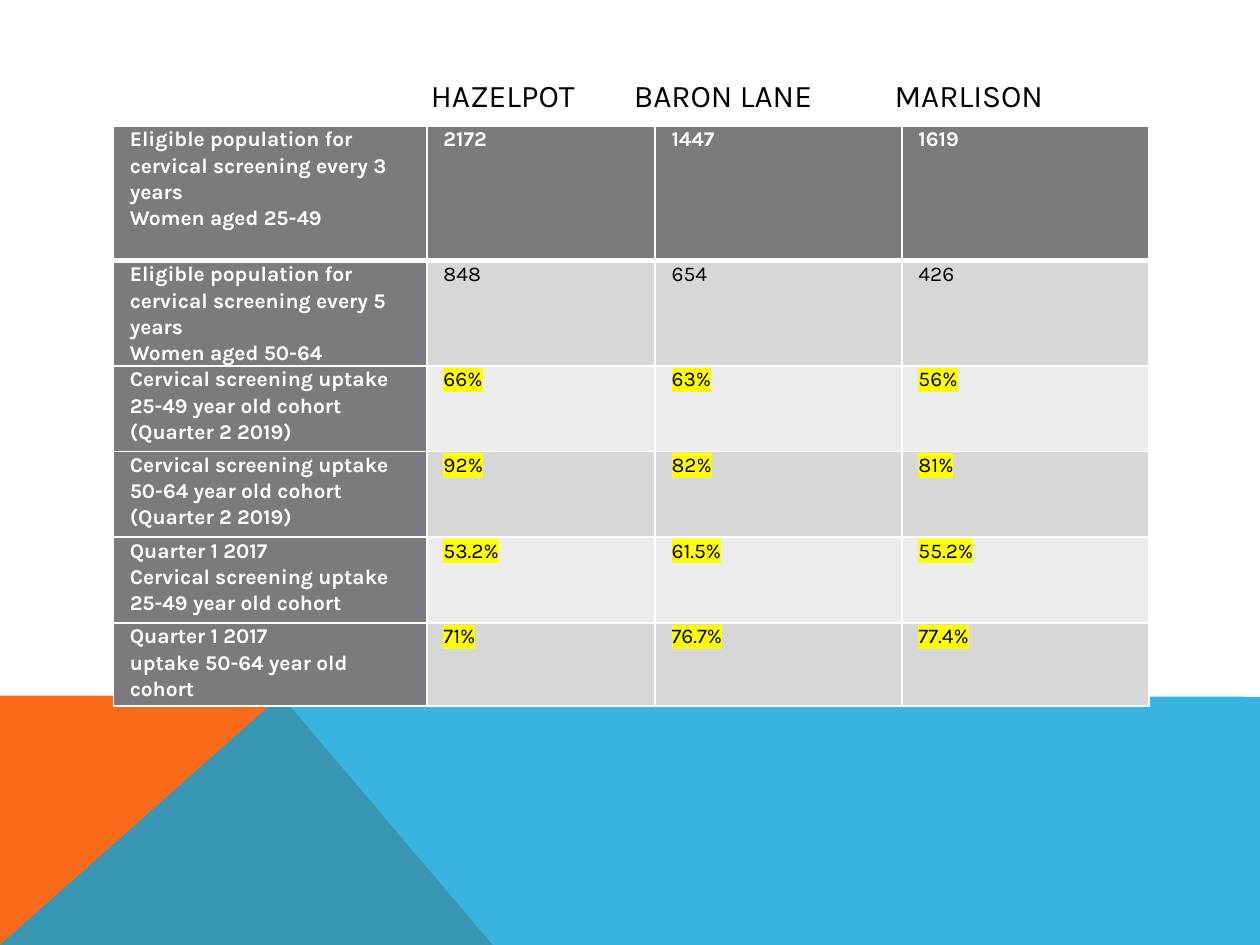
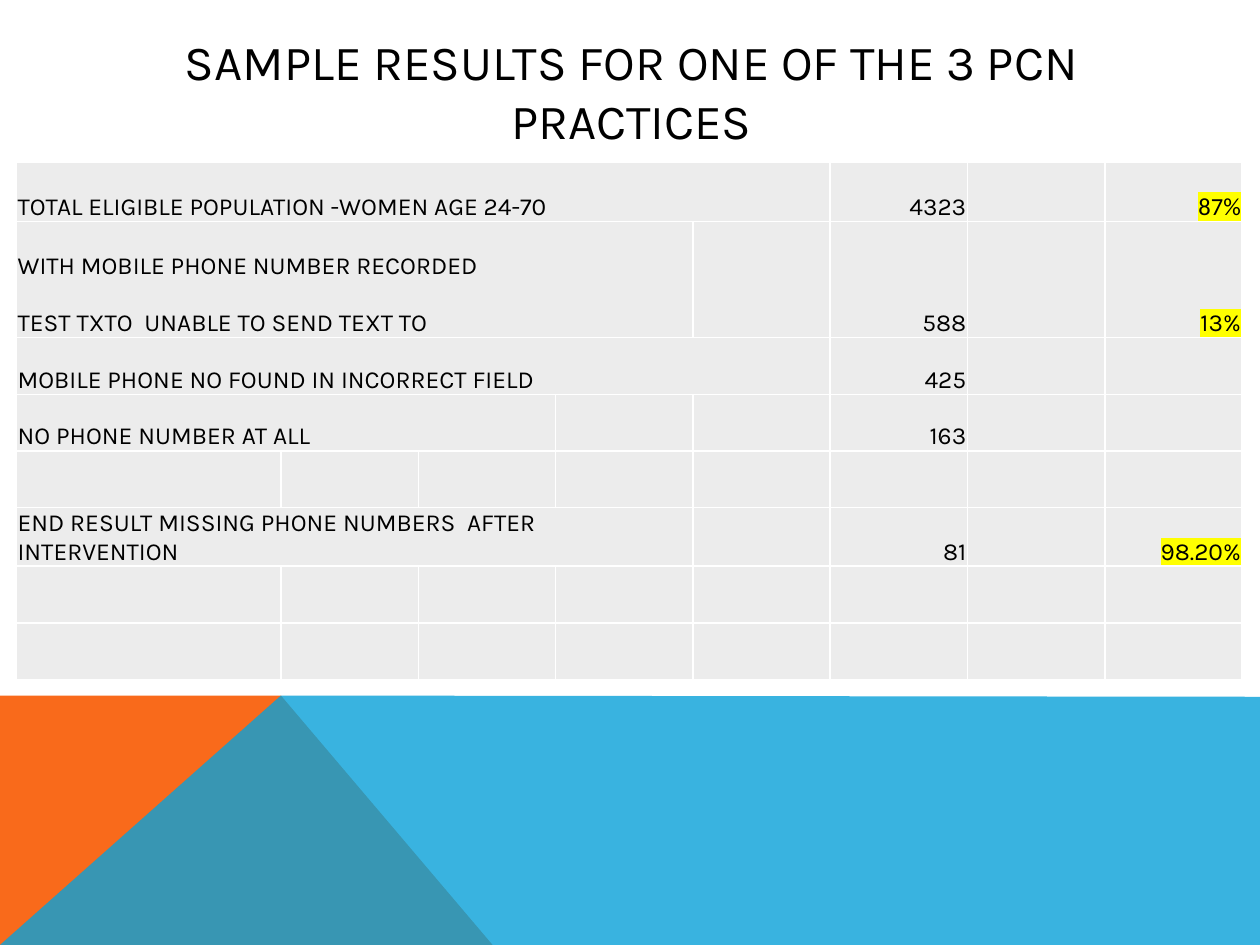
from dataclasses import dataclass

from lxml.etree import SubElement
from pptx import Presentation
from pptx.dml.color import RGBColor
from pptx.enum.text import MSO_ANCHOR as Anchor, PP_ALIGN as Align
from pptx.oxml.ns import qn
from pptx.util import Inches, Pt

BLACK, WHITE, YELLOW = "000000", "FFFFFF", "FFFF00"
ORANGE, BLUE = "F96A1B", "08A1D9"
DARK_GREY, MID_GREY, LIGHT_GREY = "797B7E", "D7D7D8", "ECECEC"
FONT = "Karla"
TITLE_LEFT, TITLE_WIDTH = 0.9, 8.22


@dataclass
class Band:
    points: list[tuple[float, float]]
    color: str
    opacity: int = 100


@dataclass
class ResultRow:
    label: str = ""
    span: int = 1
    count: str = ""
    share: str = ""
    share_font: str = FONT
    height: float = 0.45


BANDS = [
    Band([(0, 7.5), (0, 5.52), (2.23, 5.52), (3.91, 7.5)], ORANGE),
    Band([(0, 7.5), (2.23, 5.52), (10, 5.53), (10, 7.5)], BLUE, 80),
]

PRACTICES = ["HAZELPOT", "BARON LANE", "MARLISON"]
PRACTICE_TABS = [2.42, 4.03, 6.1]
UPTAKE_COLUMNS = [2.49, 1.81, 1.96, 1.96]
UPTAKE_HEIGHTS = [1.07, 0.68, 0.68, 0.68, 0.68, 0.66]
UPTAKE_ROWS = [
    ("Eligible population for cervical screening every 3 years\nWomen aged 25-49",
     "2172", "1447", "1619"),
    ("Eligible population for cervical screening every 5 years\nWomen aged 50-64",
     "848", "654", "426"),
    ("Cervical screening uptake 25-49 year old cohort (Quarter 2 2019)",
     "66%", "63%", "56%"),
    ("Cervical screening uptake 50-64 year old cohort (Quarter 2 2019)",
     "92%", "82%", "81%"),
    ("Quarter 1 2017\nCervical screening uptake 25-49 year old cohort",
     "53.2%", "61.5%", "55.2%"),
    ("Quarter 1 2017\nuptake 50-64 year old cohort",
     "71%", "76.7%", "77.4%"),
]

RESULT_COLUMNS = [2.1] + [1.09] * 7
COUNT_COLUMN, SHARE_COLUMN = 5, 7
RESULT_ROWS = [
    ResultRow("TOTAL ELIGIBLE POPULATION -WOMEN AGE 24-70", 5, "4323", "87%",
              share_font="Calibri", height=0.47),
    ResultRow("WITH MOBILE PHONE NUMBER RECORDED\nTEST TXTO  UNABLE TO SEND TEXT TO",
              4, "588", "13%", height=0.92),
    ResultRow("MOBILE PHONE NO FOUND IN INCORRECT FIELD", 5, "425"),
    ResultRow("NO PHONE NUMBER AT ALL", 3, "163"),
    ResultRow(),
    ResultRow("END RESULT MISSING PHONE NUMBERS  AFTER INTERVENTION", 4, "81", "98.20%"),
    ResultRow(),
    ResultRow(),
]


def rgb(color: str) -> RGBColor:
    return RGBColor.from_string(color)


def add_run(paragraph, text: str, *, size: float, color: str = BLACK, bold: bool = False,
            font: str = FONT, highlight: str | None = None) -> None:
    run = paragraph.add_run()
    run.text = text
    run.font.size, run.font.bold, run.font.name = Pt(size), bold, font
    run.font.color.rgb = rgb(color)
    if highlight:
        fill = run.font.fill._xPr.find(qn("a:solidFill"))
        marker = SubElement(fill.getparent(), qn("a:highlight"))
        SubElement(marker, qn("a:srgbClr"), val=highlight)
        fill.addnext(marker)


def write_text(text_frame, text: str, *, align=Align.LEFT, line_spacing: float = 1.0,
               space_before: float = 0, **run_format) -> None:
    """Write one paragraph for each line of the text."""
    for index, line in enumerate(text.split("\n")):
        paragraph = text_frame.add_paragraph() if index else text_frame.paragraphs[0]
        paragraph.alignment = align
        paragraph.line_spacing = line_spacing
        paragraph.space_before = Pt(space_before)
        add_run(paragraph, line, **run_format)


def add_bands(slide) -> None:
    """Draw the bands and move them to the layout, which both slides share."""
    for band in BANDS:
        corners = [(Inches(x), Inches(y)) for x, y in band.points]
        builder = slide.shapes.build_freeform(*corners[0], scale=1.0)
        builder.add_line_segments(corners[1:], close=True)
        shape = builder.convert_to_shape()
        shape.shadow.inherit = False
        shape.line.fill.background()
        shape.fill.solid()
        shape.fill.fore_color.rgb = rgb(band.color)
        if band.opacity < 100:
            color = shape.element.spPr.find(".//" + qn("a:srgbClr"))
            SubElement(color, qn("a:alpha"), val=str(band.opacity * 1000))
        slide.slide_layout.shapes.element.append(shape.element)


def place_title(slide, top: float, height: float):
    title = slide.shapes.title
    title.left, title.top = Inches(TITLE_LEFT), Inches(top)
    title.width, title.height = Inches(TITLE_WIDTH), Inches(height)
    title.text_frame.vertical_anchor = Anchor.MIDDLE
    title.text_frame.word_wrap = True
    return title.text_frame


def add_grid(slide, left: float, top: float, columns: list[float], heights: list[float]):
    frame = slide.shapes.add_table(len(heights), len(columns), Inches(left), Inches(top),
                                   Inches(sum(columns)), Inches(sum(heights)))
    table = frame.table
    table.first_row = table.horz_banding = False
    for column, width in zip(table.columns, columns):
        column.width = Inches(width)
    for row, height in zip(table.rows, heights):
        row.height = Inches(height)
    return table


def style_cell(cell, color: str, *, side: float, top: float = 0,
               anchor=Anchor.TOP, borders: dict[str, float] | None = None) -> None:
    """Set margins, white borders and fill; borders maps a side to its width."""
    cell.margin_left = cell.margin_right = Inches(side)
    cell.margin_top, cell.margin_bottom = Inches(top), 0
    cell.vertical_anchor = anchor
    properties = cell._tc.get_or_add_tcPr()
    widths = {"L": 1, "R": 1, "T": 1, "B": 1} | (borders or {})
    for name, width in widths.items():
        line = SubElement(properties, qn(f"a:ln{name}"), w=str(Pt(width)))
        SubElement(SubElement(line, qn("a:solidFill")), qn("a:srgbClr"), val=WHITE)
    cell.fill.solid()
    cell.fill.fore_color.rgb = rgb(color)


def build_uptake_slide(slide) -> None:
    paragraph = place_title(slide, 0.4, 0.6).paragraphs[0]
    paragraph.alignment = Align.LEFT
    tab_list = SubElement(paragraph._p.get_or_add_pPr(), qn("a:tabLst"))
    for position in PRACTICE_TABS:
        SubElement(tab_list, qn("a:tab"), pos=str(Inches(position)), algn="l")
    add_run(paragraph, "\t", size=28)
    add_run(paragraph, "\t".join(PRACTICES), size=18)

    table = add_grid(slide, TITLE_LEFT, 1, UPTAKE_COLUMNS, UPTAKE_HEIGHTS)
    for row, values in enumerate(UPTAKE_ROWS):
        for column, value in enumerate(values):
            cell = table.cell(row, column)
            is_header = row == 0 or column == 0
            body_color = MID_GREY if row % 2 else LIGHT_GREY
            borders = {"B": 3} if row == 0 else {"T": 3} if row == 1 else {}
            style_cell(cell, DARK_GREY if is_header else body_color,
                       side=0.13, borders=borders)
            write_text(cell.text_frame, value, size=12, line_spacing=1.07, bold=is_header,
                       color=WHITE if is_header else BLACK,
                       highlight=YELLOW if value.endswith("%") else None)


def build_results_slide(slide) -> None:
    write_text(place_title(slide, 0.14, 1.15),
               "SAMPLE RESULTS FOR ONE OF THE 3 PCN PRACTICES", size=28, align=Align.CENTER)

    table = add_grid(slide, 0.13, 1.29, RESULT_COLUMNS, [row.height for row in RESULT_ROWS])
    for index, row in enumerate(RESULT_ROWS):
        cells = [table.cell(index, column) for column in range(len(RESULT_COLUMNS))]
        for cell in cells:
            style_cell(cell, LIGHT_GREY, side=0.01, top=0.01, anchor=Anchor.BOTTOM)
        if row.span > 1:
            cells[0].merge(cells[row.span - 1])
        if row.label:
            write_text(cells[0].text_frame, row.label, size=14,
                       space_before=16.4 if "\n" in row.label else 0)
        if row.count:
            write_text(cells[COUNT_COLUMN].text_frame, row.count, size=14, align=Align.RIGHT)
        if row.share:
            write_text(cells[SHARE_COLUMN].text_frame, row.share, size=14, align=Align.RIGHT,
                       font=row.share_font, highlight=YELLOW)


def main() -> None:
    presentation = Presentation()
    presentation.slide_width, presentation.slide_height = Inches(10), Inches(7.5)
    title_only = presentation.slide_layouts[5]
    uptake_slide, results_slide = (presentation.slides.add_slide(title_only) for _ in range(2))
    add_bands(uptake_slide)
    build_uptake_slide(uptake_slide)
    build_results_slide(results_slide)
    presentation.save("out.pptx")


if __name__ == "__main__":
    main()
